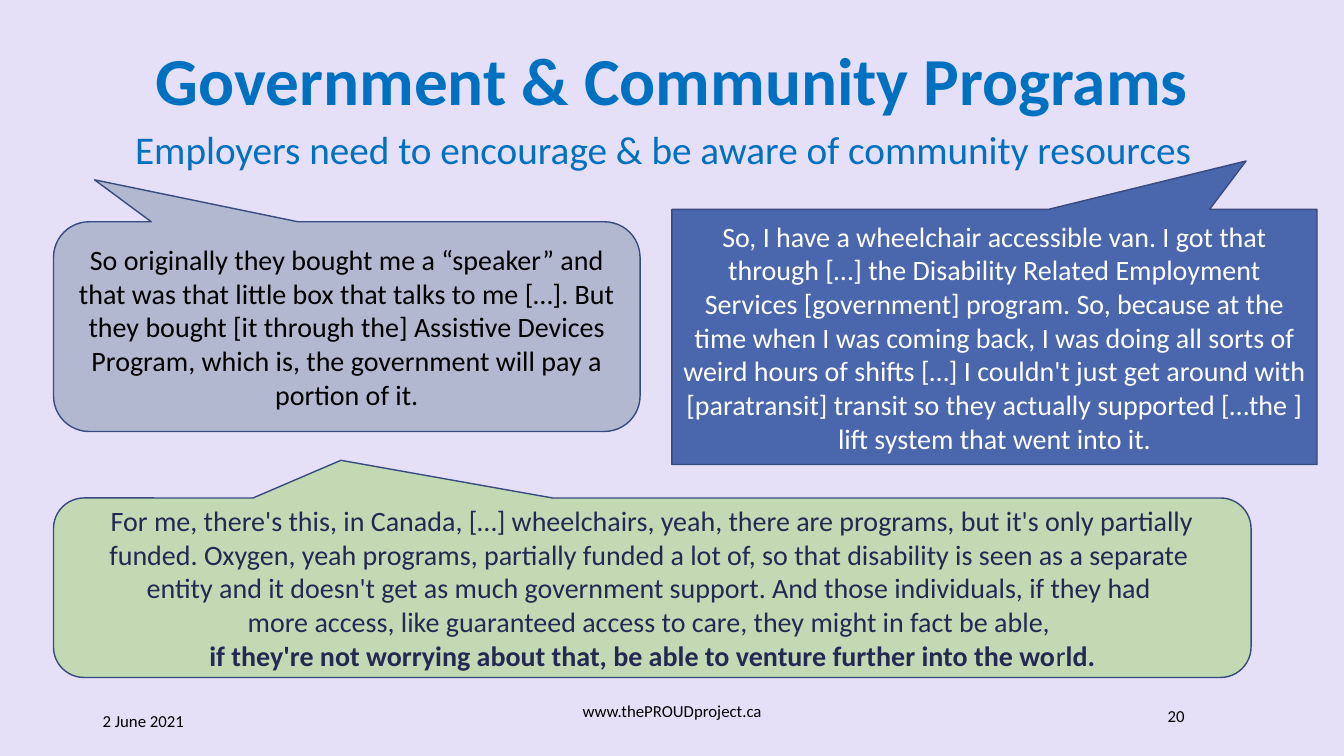
"""Build the slide on government and community programs with three quoted callouts."""
from dataclasses import dataclass

from lxml.etree import SubElement
from pptx import Presentation
from pptx.dml.color import RGBColor
from pptx.enum.shapes import MSO_SHAPE as Preset
from pptx.enum.text import MSO_ANCHOR as Anchor, PP_ALIGN as Align
from pptx.oxml.ns import qn
from pptx.shapes.autoshape import Shape
from pptx.slide import Slide
from pptx.util import Pt

LAVENDER = RGBColor(0xE5, 0xE0, 0xF8)
HEADING_BLUE = RGBColor(0x00, 0x70, 0xC0)
SLATE = RGBColor(0x7F, 0x8F, 0xA9)
ROYAL_BLUE = RGBColor(0x4A, 0x66, 0xAC)
GREEN = RGBColor(0x92, 0xD0, 0x50)
OUTLINE = RGBColor(0x37, 0x4B, 0x7F)
NAVY = RGBColor(0x24, 0x28, 0x52)
BLACK = RGBColor(0x00, 0x00, 0x00)
WHITE = RGBColor(0xFF, 0xFF, 0xFF)
FONT = "Calibri"


@dataclass(frozen=True)
class Span:
    text: str
    bold: bool = False


Lines = list[list[Span]]
Bounds = tuple[float, float, float, float]


@dataclass(frozen=True)
class Label:
    bounds: Bounds
    lines: Lines
    size: float
    color: RGBColor
    align: Align = Align.CENTER
    anchor: Anchor = Anchor.MIDDLE
    wrap: bool = True
    spacing: float = 1.0


@dataclass(frozen=True)
class Callout:
    preset: Preset
    bounds: Bounds
    adjustments: tuple[float, ...]
    fill: RGBColor
    opacity: int
    color: RGBColor
    lines: Lines


LABELS = [
    Label((66.2, 29.5, 828, 60.5), [[Span("Government & Community Programs", True)]],
          48, HEADING_BLUE, spacing=0.9),
    Label((78.7, 85.7, 789.8, 41),
          [[Span("Employers need to encourage & be aware of community resources")]],
          28, HEADING_BLUE, anchor=Anchor.TOP, wrap=False),
    Label((66.2, 500.4, 216, 28.8), [[Span("2 June 2021")]], 12, BLACK, Align.LEFT),
    Label((318.2, 493.2, 324, 28.8), [[Span("www.thePROUDproject.ca")]], 12, BLACK),
    Label((678.2, 496.8, 324, 28.8), [[Span("20")]], 12, BLACK),
]

CALLOUTS = [
    Callout(
        Preset.ROUNDED_RECTANGULAR_CALLOUT, (38.2, 158.4, 419, 149.8),
        (-0.43, -0.7, 0.17), SLATE, 49, BLACK,
        [[Span("So originally they bought me a “speaker” and that was that little box "
               "that talks to me […]. But they bought [it through the] Assistive Devices "
               "Program, which is, the government will pay a portion of it.")]],
    ),
    Callout(
        Preset.RECTANGULAR_CALLOUT, (480, 149.6, 460.8, 182.2),
        (0.39, -0.69), ROYAL_BLUE, 100, WHITE,
        [[Span("So, I have a wheelchair accessible van. I got that through […] the "
               "Disability Related Employment Services [government] program. So, because "
               "at the time when I was coming back, I was doing all sorts of weird hours "
               "of shifts […] I couldn't just get around with [paratransit] transit so "
               "they actually supported […the ] lift system that went into it.")]],
    ),
    Callout(
        Preset.ROUNDED_RECTANGULAR_CALLOUT, (38.2, 355.7, 855.4, 128.2),
        (-0.26, -0.71, 0.17), GREEN, 40, NAVY,
        [
            [Span("For me, there's this, in Canada, […] wheelchairs, yeah, there are "
                  "programs, but it's only partially funded. Oxygen, yeah programs, "
                  "partially funded a lot of, so that disability is seen as a separate ")],
            [Span("entity and it doesn't get as much government support. And those "
                  "individuals, if they had ")],
            [Span("more access, like guaranteed access to care, they might in fact be able, ")],
            [Span("if they're not worrying about that, be able to venture further into "
                  "the wo", True), Span("r"), Span("ld.", True)],
        ],
    ),
]


def write_lines(box: Shape, label: Label) -> None:
    """Write the label's paragraphs into the box, run by run."""
    frame = box.text_frame
    frame.word_wrap = label.wrap
    frame.vertical_anchor = label.anchor
    for index, line in enumerate(label.lines):
        para = frame.add_paragraph() if index else frame.paragraphs[0]
        para.alignment = label.align
        para.line_spacing = label.spacing
        for span in line:
            run = para.add_run()
            run.text = span.text
            run.font.name = FONT
            run.font.size = Pt(label.size)
            run.font.bold = span.bold
            run.font.color.rgb = label.color


def draw_label(page: Slide, label: Label) -> None:
    """Add a text box for the label."""
    write_lines(page.shapes.add_textbox(*map(Pt, label.bounds)), label)


def draw_callout(page: Slide, callout: Callout) -> None:
    """Add a speech callout with its quotation."""
    box = page.shapes.add_shape(callout.preset, *map(Pt, callout.bounds))
    box.shadow.inherit = False
    for index, value in enumerate(callout.adjustments):
        box.adjustments[index] = value
    box.fill.solid()
    box.fill.fore_color.rgb = callout.fill
    if callout.opacity < 100:
        tint = box.fill._xPr.find(qn("a:solidFill"))[0]
        SubElement(tint, qn("a:alpha"), val=str(callout.opacity * 1000))
    box.line.color.rgb = OUTLINE
    box.line.width = Pt(1)
    write_lines(box, Label(callout.bounds, callout.lines, 20, callout.color))


def main() -> None:
    """Build and save the deck."""
    deck = Presentation()
    deck.slide_width, deck.slide_height = Pt(960), Pt(540)
    page = deck.slides.add_slide(deck.slide_layouts[6])
    page.background.fill.solid()
    page.background.fill.fore_color.rgb = LAVENDER
    for label in LABELS:
        draw_label(page, label)
    for callout in CALLOUTS:
        draw_callout(page, callout)
    deck.save("out.pptx")


if __name__ == "__main__":
    main()
